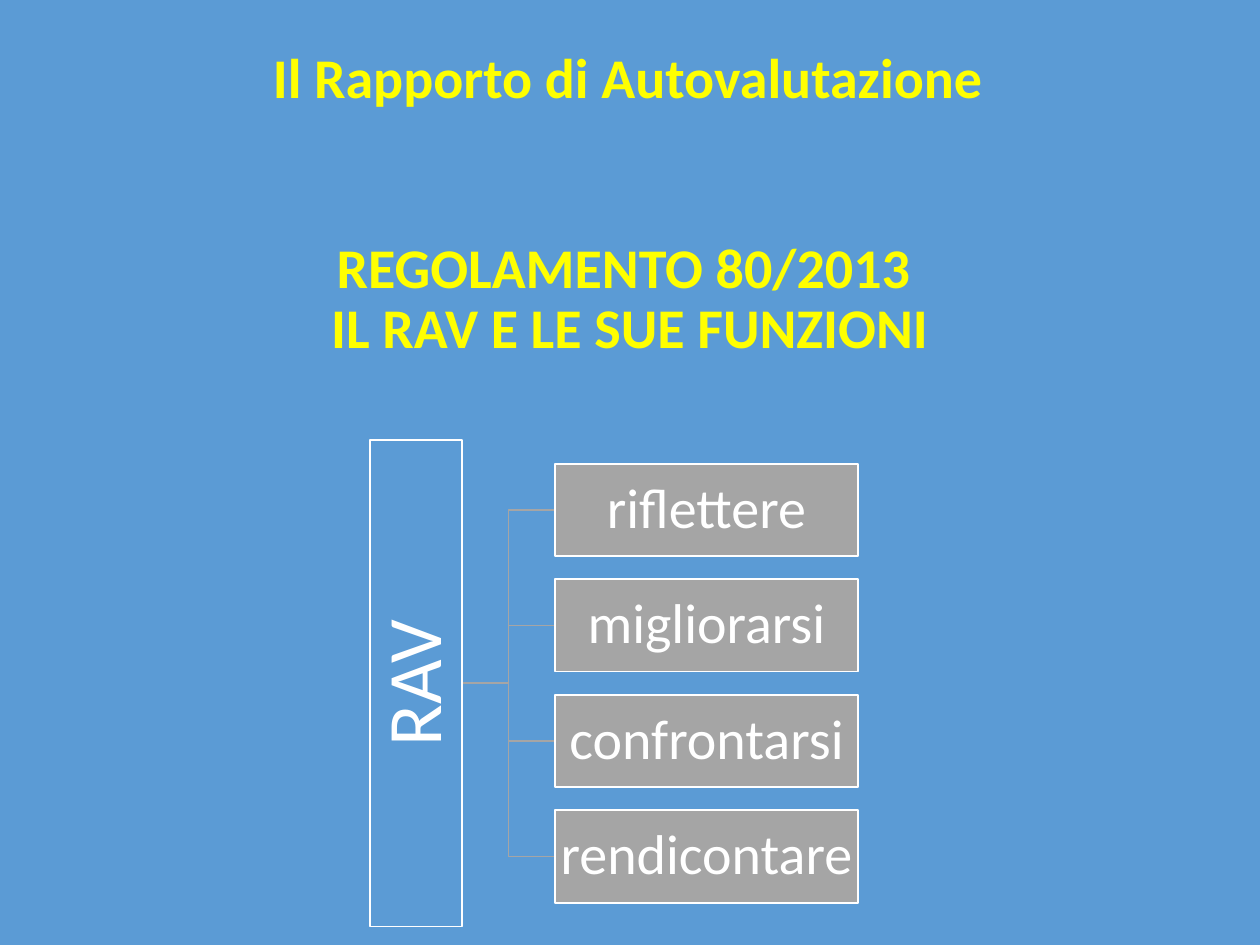
from pptx import Presentation
from pptx.dml.color import RGBColor
from pptx.enum.shapes import MSO_SHAPE
from pptx.enum.text import MSO_ANCHOR, MSO_AUTO_SIZE, PP_ALIGN
from pptx.util import Pt

RECTANGLE = MSO_SHAPE.RECTANGLE
MIDDLE, TOP = MSO_ANCHOR.MIDDLE, MSO_ANCHOR.TOP
CENTER = PP_ALIGN.CENTER
NO_AUTOFIT = MSO_AUTO_SIZE.NONE

COLORS = {"blue": "5B9BD5", "yellow": "FFFF00", "gray": "A5A5A5", "white": "FFFFFF"}
FUNCTIONS = ["riflettere", "migliorarsi", "confrontarsi", "rendicontare"]


def rgb(name):
    return RGBColor.from_string(COLORS[name])


class SlideBuilder:
    """Holds the style and the current slide; lengths are in points."""

    font = "Calibri"
    line_width = 1

    def __init__(self, slide):
        self.slide = slide
        slide.background.fill.solid()
        slide.background.fill.fore_color.rgb = rgb("blue")

    def set_text(self, frame, text, size, color, bold=False, spacing=0.9, anchor=MIDDLE):
        frame.text = text
        frame.word_wrap = True
        frame.auto_size = NO_AUTOFIT
        frame.vertical_anchor = anchor
        paragraph = frame.paragraphs[0]
        paragraph.alignment = CENTER
        paragraph.line_spacing = spacing
        for run in paragraph.runs:
            run.font.name = self.font
            run.font.size = Pt(size)
            run.font.bold = bold
            run.font.color.rgb = rgb(color)

    def title(self, text, left, top, width, height):
        title = self.slide.shapes.title
        title.left, title.top = Pt(left), Pt(top)
        title.width, title.height = Pt(width), Pt(height)
        self.set_text(title.text_frame, text, 32, "yellow", bold=True)

    def heading(self, text, left, top, width, height):
        heading = self.slide.shapes.add_textbox(Pt(left), Pt(top), Pt(width), Pt(height))
        self.set_text(heading.text_frame, text, 32, "yellow", bold=True, spacing=1.0, anchor=TOP)

    def box(self, text, left, top, width, height, fill, size, inset, rotation=0):
        box = self.slide.shapes.add_shape(RECTANGLE, Pt(left), Pt(top), Pt(width), Pt(height))
        box.rotation = rotation
        box.shadow.inherit = False
        box.fill.solid()
        box.fill.fore_color.rgb = rgb(fill)
        box.line.color.rgb = rgb("white")
        box.line.width = Pt(self.line_width)
        frame = box.text_frame
        frame.margin_left = frame.margin_right = Pt(inset)
        frame.margin_top = frame.margin_bottom = Pt(inset)
        self.set_text(frame, text, size, "white")

    def elbow(self, x1, y1, x2, y2):
        """Draw a branch that turns halfway between its two ends."""
        middle = (x1 + x2) / 2
        builder = self.slide.shapes.build_freeform(Pt(x1), Pt(y1))
        corners = [(middle, y1), (middle, y2), (x2, y2)]
        builder.add_line_segments([(Pt(x), Pt(y)) for x, y in corners], close=False)
        branch = builder.convert_to_shape()
        branch.shadow.inherit = False
        branch.fill.background()
        branch.line.color.rgb = rgb("gray")
        branch.line.width = Pt(self.line_width)


def main():
    presentation = Presentation()
    presentation.slide_width, presentation.slide_height = Pt(720), Pt(540)
    title_only = presentation.slide_layouts[5]
    builder = SlideBuilder(presentation.slides.add_slide(title_only))

    builder.title("REGOLAMENTO 80/2013 \vIL RAV E LE SUE FUNZIONI", 0, 134, 720, 75)

    box_height, pitch = 52.8, 66
    leaf_left, leaf_width, first_top = 317, 173.5, 265
    root_length, root_right = 278, 264.2
    tops = [first_top + pitch * i for i in range(len(FUNCTIONS))]
    center_y = (tops[0] + tops[-1] + box_height) / 2

    for top in reversed(tops):
        builder.elbow(root_right, center_y, leaf_left, top + box_height / 2)

    # The root is laid out horizontally around its centre, then turned upright.
    root_center_x = root_right - box_height / 2
    builder.box("RAV", root_center_x - root_length / 2, center_y - box_height / 2,
                root_length, box_height, "blue", 44, 2.2, rotation=270)
    for function, top in zip(FUNCTIONS, tops):
        builder.box(function, leaf_left, top, leaf_width, box_height, "gray", 32, 1.6)

    builder.heading("Il Rapporto di Autovalutazione ", 25, 21, 675, 46)
    presentation.save("out.pptx")


if __name__ == "__main__":
    main()
